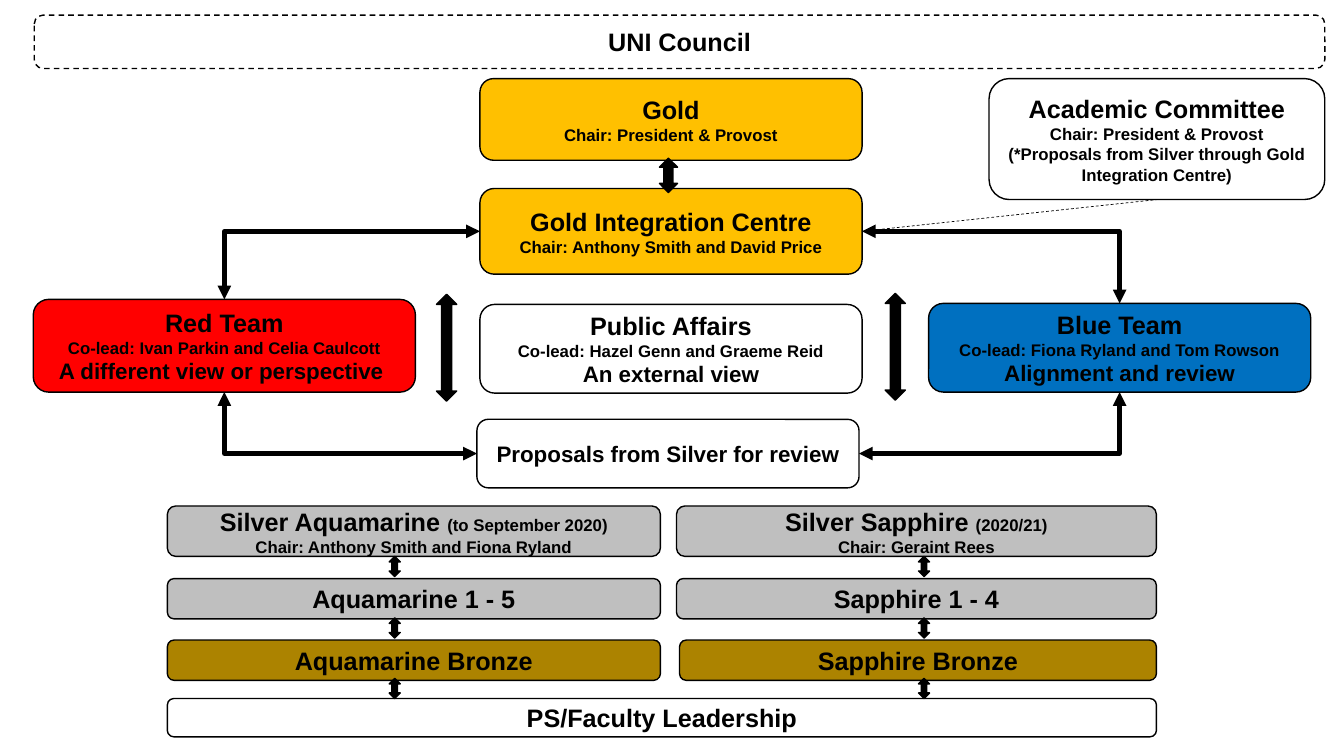
from pptx import Presentation, util as u
from pptx.dml.color import RGBColor
from pptx.enum import dml, shapes, text
from pptx.oxml.ns import qn
from lxml import etree

BLACK, WHITE, GOLD, SILVER, BRONZE = "000000", "FFFFFF", "FFC000", "BFBFBF", "AC8300"
TOP, LEFT, BOTTOM, RIGHT = range(4)


def rgb(color):
    """Turn a hex string into a colour."""
    return RGBColor.from_string(color)


def add_preset(s, kind, box, fill):
    """Add a filled preset shape with a thin black outline."""
    sp = s.shapes.add_shape(kind, *map(u.Inches, box))
    sp.shadow.inherit = False
    sp.fill.solid()
    sp.fill.fore_color.rgb = rgb(fill)
    sp.line.color.rgb = rgb(BLACK)
    sp.line.width = u.Pt(1)
    return sp


def add_group_box(s, box, fill, *lines):
    """Add a rounded box; each line is (text, size) or (text, size, small text)."""
    sp = add_preset(s, shapes.MSO_SHAPE.ROUNDED_RECTANGLE, box, fill)
    tf = sp.text_frame
    tf.word_wrap = True
    tf.vertical_anchor = text.MSO_ANCHOR.MIDDLE
    for i, (words, size, *small) in enumerate(lines):
        p = tf.add_paragraph() if i else tf.paragraphs[0]
        p.alignment = text.PP_ALIGN.CENTER
        p.font.name, p.font.size, p.font.bold = "Arial", u.Pt(size), True
        p.font.color.rgb = rgb(BLACK)
        p.add_run().text = words
        for extra in small:
            r = p.add_run()
            r.text, r.font.size = extra, u.Pt(12)
    return sp


def add_double_arrow(s, x, y, w, h):
    """Add a black two-way block arrow."""
    add_preset(s, shapes.MSO_SHAPE.UP_DOWN_ARROW, (x, y, w, h), BLACK)


def join(s, start, start_site, end, end_site, width, kind=shapes.MSO_CONNECTOR.STRAIGHT):
    """Connect two boxes with a plain black line."""
    cx = s.shapes.add_connector(kind, 0, 0, 0, 0)
    cx.begin_connect(start, start_site)
    cx.end_connect(end, end_site)
    cx.line.color.rgb = rgb(BLACK)
    cx.line.width = u.Pt(width)
    etree.SubElement(cx._element.spPr, qn("a:effectLst"))
    return cx


def join_bent(s, start, start_site, end, end_site):
    """Connect two boxes with one right-angle bend and arrowheads at both ends."""
    cx = join(s, start, start_site, end, end_site, 3.25, shapes.MSO_CONNECTOR.ELBOW)
    cx._element.spPr.find(qn("a:prstGeom")).set("prst", "bentConnector2")
    ln = cx.line._get_or_add_ln()
    for tag in ("a:headEnd", "a:tailEnd"):
        etree.SubElement(ln, qn(tag), type="triangle")


def add_review_ring(s, x, y, w):
    """Draw the gold, team and proposal boxes around the central column."""
    add_group_box(s, (x, y, w, 0.81), GOLD, ("Gold", 18), ("Chair: President & Provost", 12))
    centre = add_group_box(s, (x, y + 1.09, w, 0.85), GOLD, ("Gold Integration Centre", 18),
                           ("Chair: Anthony Smith and David Price", 12))
    red = add_group_box(s, (x - 4.43, y + 2.19, w, 0.92), "FF0000", ("Red Team", 18),
                        ("Co-lead: Ivan Parkin and Celia Caulcott", 12),
                        ("A different view or perspective ", 16))
    add_group_box(s, (x, y + 2.24, w, 0.88), WHITE, ("Public Affairs", 18),
                  ("Co-lead: Hazel Genn and Graeme Reid", 12), ("An external view", 16))
    blue = add_group_box(s, (x + 4.45, y + 2.23, w, 0.88), "0070C0", ("Blue Team", 18),
                         ("Co-lead: Fiona Ryland and Tom Rowson", 12),
                         ("Alignment and review", 16))
    proposals = add_group_box(s, (x - 0.03, y + 3.38, w, 0.68), WHITE,
                              ("Proposals from Silver for review", 16))
    for team, side in ((red, LEFT), (blue, RIGHT)):
        join_bent(s, centre, side, team, TOP)
        join_bent(s, proposals, side, team, BOTTOM)
    add_double_arrow(s, x + 1.78, y + 0.79, 0.18, 0.34)
    for arrow_x, arrow_y in ((x - 0.43, y + 2.14), (x + 4.02, y + 2.13)):
        add_double_arrow(s, arrow_x, arrow_y, 0.2, 1.06)
    return centre


def add_committee(s, x, y, w, h, centre):
    """Draw the academic committee and its dashed link to the centre."""
    committee = add_group_box(s, (x, y, w, h), WHITE, ("Academic Committee", 18),
                              ("Chair: President & Provost", 12),
                              ("(*Proposals from Silver through Gold Integration Centre)", 12))
    link = join(s, centre, RIGHT, committee, BOTTOM, 0.5)
    link.line.dash_style = dml.MSO_LINE.DASH


def add_stream(s, x, y, w, name, members, term, chair, arrow_x, bronze_inset=0):
    """Draw one silver stream from its chair down to bronze."""
    add_group_box(s, (x, y, w, 0.5), SILVER, (f"Silver {name} ", 18, term), (chair, 12))
    add_group_box(s, (x, y + 0.72, w, 0.4), SILVER, (f"{name} {members}", 18))
    add_group_box(s, (x + bronze_inset, y + 1.33, w - bronze_inset, 0.4), BRONZE,
                  (f"{name} Bronze", 18))
    for dy in (0.5, 1.11, 1.71):
        add_double_arrow(s, arrow_x, y + dy, 0.11, 0.2)


def main():
    """Build the slide and save it."""
    prs = Presentation()
    prs.slide_width, prs.slide_height = u.Inches(13.33), u.Inches(7.5)
    s = prs.slides.add_slide(prs.slide_layouts[6])
    council = add_group_box(s, (0.34, 0.15, 12.8, 0.53), WHITE, ("UNI Council", 18))
    council.line.dash_style = dml.MSO_LINE.DASH
    centre = add_review_ring(s, 4.76, 0.78, 3.79)
    add_committee(s, 9.81, 0.78, 3.33, 1.2, centre)
    add_group_box(s, (1.66, 6.93, 9.81, 0.38), WHITE, ("PS/Faculty Leadership", 18))
    add_stream(s, 1.66, 5.02, 4.89, "Aquamarine", "1 - 5", "(to September 2020)",
               "Chair: Anthony Smith and Fiona Ryland", 3.86)
    add_stream(s, 6.71, 5.02, 4.76, "Sapphire", "1 - 4", "(2020/21)",
               "Chair: Geraint Rees", 9.11, 0.03)
    prs.save("out.pptx")


if __name__ == "__main__":
    main()
